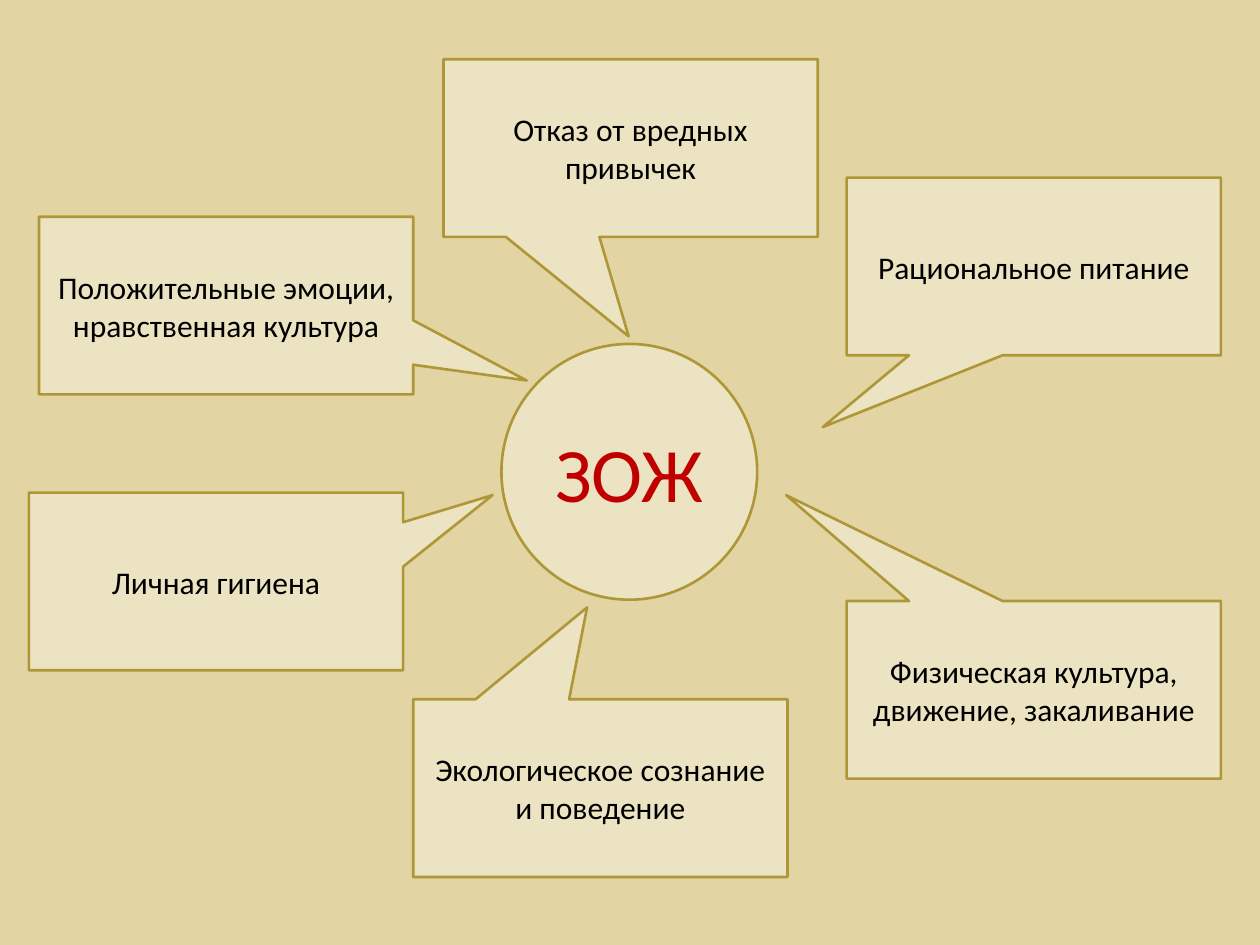
from pptx import Presentation
from pptx.dml.color import RGBColor
from pptx.enum import shapes, text
from pptx.util import Inches, Pt

BACKGROUND, FILL, LINE = "E2D5A3", "EBE3C2", "AF9738"
BLACK, RED = "000000", "C00000"
FONT = "Calibri"

CENTER = ("ЗОЖ", 3.98, 2.73, 2.03)
BOX_W, BOX_H = 2.97, 1.41
# text, left and top of the box, point of the callout tip
CALLOUTS = [
    ("Отказ от вредных привычек", (3.52, 0.47), (4.99, 2.67)),
    ("Положительные эмоции, нравственная культура", (0.31, 1.72), (4.18, 3.02)),
    ("Рациональное питание", (6.72, 1.41), (6.53, 3.39)),
    ("Физическая культура, движение, закаливание", (6.72, 4.77), (6.24, 3.93)),
    ("Экологическое сознание и поведение", (3.28, 5.55), (4.66, 4.82)),
    ("Личная гигиена", (0.23, 3.91), (3.91, 3.93)),
]


def paint(fill, color):
    fill.solid()
    fill.fore_color.rgb = RGBColor.from_string(color)


def add_label(s, kind, label, left, top, width, height, size, color):
    sp = s.shapes.add_shape(kind, *map(Inches, (left, top, width, height)))
    sp.shadow.inherit = False
    paint(sp.fill, FILL)
    paint(sp.line.fill, LINE)
    sp.line.width = Pt(1.5)
    tf = sp.text_frame
    tf.word_wrap = True
    tf.vertical_anchor = text.MSO_ANCHOR.MIDDLE
    p = tf.paragraphs[0]
    p.text = label
    p.alignment = text.PP_ALIGN.CENTER
    p.font.name = FONT
    p.font.size = Pt(size)
    paint(p.font.fill, color)
    return sp


def main():
    prs = Presentation()
    prs.slide_width, prs.slide_height = Inches(10), Inches(7.5)
    s = prs.slides.add_slide(prs.slide_layouts[6])
    paint(s.background.fill, BACKGROUND)

    label, left, top, diameter = CENTER
    add_label(s, shapes.MSO_SHAPE.OVAL, label, left, top, diameter, diameter, 44, RED)

    for label, (left, top), (tip_x, tip_y) in CALLOUTS:
        sp = add_label(s, shapes.MSO_SHAPE.RECTANGULAR_CALLOUT, label,
                       left, top, BOX_W, BOX_H, 18, BLACK)
        sp.adjustments[0] = (tip_x - left) / BOX_W - 0.5
        sp.adjustments[1] = (tip_y - top) / BOX_H - 0.5

    prs.save("out.pptx")


if __name__ == "__main__":
    main()
